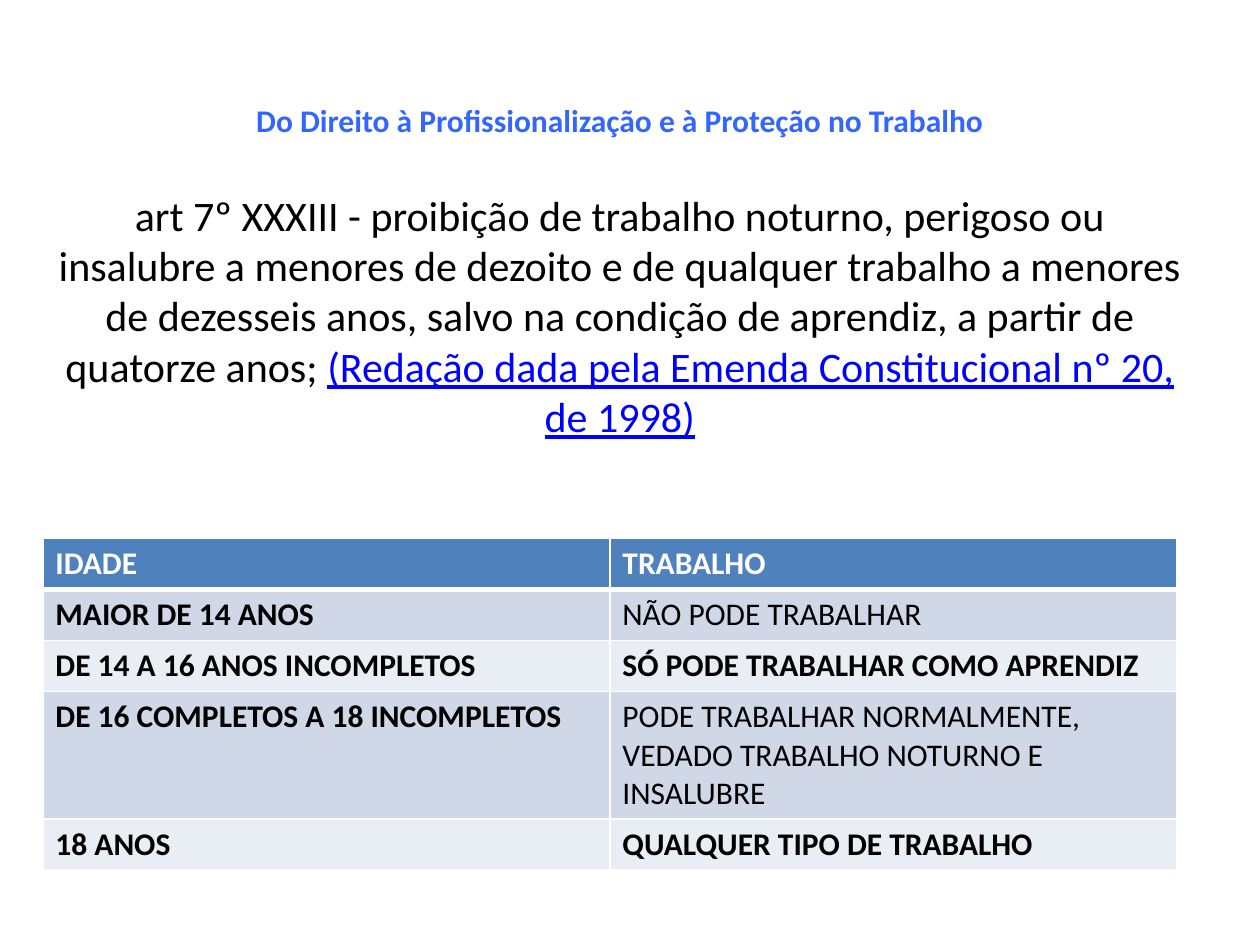
from lxml.etree import SubElement
from pptx import Presentation
from pptx.dml.color import RGBColor
from pptx.enum.text import MSO_ANCHOR, PP_ALIGN
from pptx.oxml.ns import qn
from pptx.util import Pt

COLORS = {
    "title": "3366FF",
    "text": "000000",
    "link": "0000FF",
    "header": "4F81BD",
    "odd": "D0D8E8",
    "even": "E9EDF4",
    "white": "FFFFFF",
}
FONT = "Calibri"
ROWS = [
    ("IDADE", "TRABALHO"),
    ("MAIOR DE 14 ANOS", "NÃO PODE TRABALHAR"),
    ("DE 14 A 16 ANOS INCOMPLETOS", "SÓ PODE TRABALHAR COMO APRENDIZ"),
    (
        "DE 16 COMPLETOS A 18 INCOMPLETOS",
        "PODE TRABALHAR NORMALMENTE, VEDADO TRABALHO NOTURNO E INSALUBRE",
    ),
    ("18 ANOS", "QUALQUER TIPO DE TRABALHO"),
]
ROW_HEIGHTS = [29.2, 29.2, 29.2, 73, 29.2]
REGULAR_CELLS = {(1, 1), (3, 1)}


def add_run(paragraph, text, color, **formats):
    run = paragraph.add_run()
    run.text = text
    run.font.color.rgb = RGBColor.from_string(COLORS[color])
    for name, value in {"name": FONT, **formats}.items():
        setattr(run.font, name, value)


def add_heading(slide, left, top, width, height):
    shape = slide.shapes.add_textbox(Pt(left), Pt(top), Pt(width), Pt(height))
    frame = shape.text_frame
    settings = {
        "word_wrap": True,
        "vertical_anchor": MSO_ANCHOR.MIDDLE,
        "margin_top": Pt(37.6),
    }
    for name, value in settings.items():
        setattr(frame, name, value)
    title = frame.paragraphs[0]
    article = frame.add_paragraph()
    for paragraph in (title, article):
        paragraph.alignment = PP_ALIGN.CENTER
    title.space_after = Pt(28.5)
    add_run(
        title,
        "Do Direito à Profissionalização e à Proteção no Trabalho",
        "title", size=Pt(18), bold=True,
    )
    add_run(
        article,
        "art 7º XXXIII - proibição de trabalho noturno, perigoso ou insalubre "
        "a menores de dezoito e de qualquer trabalho a menores de dezesseis "
        "anos, salvo na condição de aprendiz, a partir de quatorze anos; ",
        "text", size=Pt(24), bold=False,
    )
    add_run(
        article,
        "(Redação dada pela Emenda Constitucional nº 20, de 1998)",
        "link", size=Pt(24), bold=False, underline=True,
    )


def set_borders(cell, widths):
    properties = cell._tc.get_or_add_tcPr()
    for index, (side, width) in enumerate(widths.items()):
        line = SubElement(properties, qn(f"a:ln{side}"), w=str(Pt(width)))
        fill = SubElement(line, qn("a:solidFill"))
        SubElement(fill, qn("a:srgbClr"), val=COLORS["white"])
        properties.insert(index, line)


def add_age_table(slide, left, top, width):
    frame = slide.shapes.add_table(
        len(ROWS), len(ROWS[0]), Pt(left), Pt(top), Pt(width), Pt(sum(ROW_HEIGHTS))
    )
    table = frame.table
    for column in table.columns:
        column.width = Pt(width / len(ROWS[0]))
    for row_index, texts in enumerate(ROWS):
        table.rows[row_index].height = Pt(ROW_HEIGHTS[row_index])
        is_header = row_index == 0
        fill = "header" if is_header else ("even", "odd")[row_index % 2]
        for column_index, text in enumerate(texts):
            cell = table.cell(row_index, column_index)
            cell.fill.solid()
            cell.fill.fore_color.rgb = RGBColor.from_string(COLORS[fill])
            add_run(
                cell.text_frame.paragraphs[0],
                text,
                "white" if is_header else "text",
                size=Pt(18),
                bold=(row_index, column_index) not in REGULAR_CELLS,
            )
            top_width = 3 if row_index == 1 else 1
            bottom_width = 3 if is_header else 1
            set_borders(cell, {"L": 1, "R": 1, "T": top_width, "B": bottom_width})


def main():
    presentation = Presentation()
    presentation.slide_width = Pt(720)
    presentation.slide_height = Pt(540)
    slide = presentation.slides.add_slide(presentation.slide_layouts[6])
    add_heading(slide, 24.5, 82, 659.5, 112)
    add_age_table(slide, 24.5, 307.5, 648)
    presentation.save("out.pptx")


if __name__ == "__main__":
    main()
